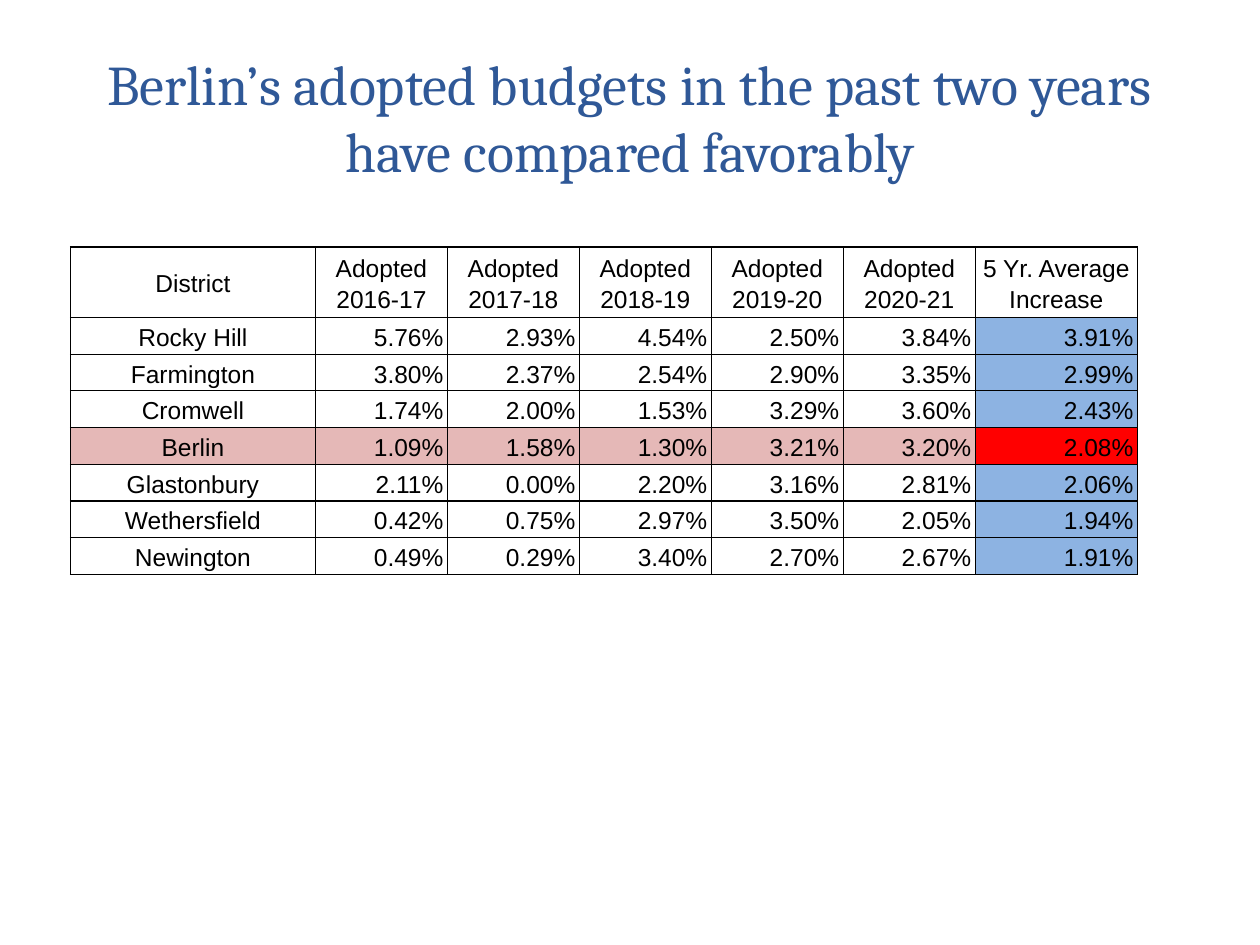
"""Build a slide comparing adopted school budget increases by district."""
from dataclasses import dataclass

import pptx
import pptx.dml.color
import pptx.enum.text
import pptx.oxml.ns
import pptx.util
from lxml import etree
from pptx.util import Cm

ALIGN = pptx.enum.text.PP_ALIGN
MIDDLE = pptx.enum.text.MSO_ANCHOR.MIDDLE


@dataclass(frozen=True)
class Theme:
    title_font: str = "Cambria"
    body_font: str = "Arial"
    title_size: int = 32
    body_size: int = 14
    border_width: float = 0.75
    title: str = "2F5897"
    text: str = "000000"
    average: str = "8DB3E2"
    highlight: str = "E5B8B7"
    highlight_average: str = "FF0000"


THEME = Theme()
TITLE = "Berlin’s adopted budgets in the past two years have compared favorably"
HIGHLIGHTED = "Berlin"
YEARS = ["2016-17", "2017-18", "2018-19", "2019-20", "2020-21"]
HEADER = ["District", *(f"Adopted {year}" for year in YEARS), "5 Yr. Average Increase"]
INCREASES = {
    "Rocky Hill": [5.76, 2.93, 4.54, 2.50, 3.84, 3.91],
    "Farmington": [3.80, 2.37, 2.54, 2.90, 3.35, 2.99],
    "Cromwell": [1.74, 2.00, 1.53, 3.29, 3.60, 2.43],
    "Berlin": [1.09, 1.58, 1.30, 3.21, 3.20, 2.08],
    "Glastonbury": [2.11, 0.00, 2.20, 3.16, 2.81, 2.06],
    "Wethersfield": [0.42, 0.75, 2.97, 3.50, 2.05, 1.94],
    "Newington": [0.49, 0.29, 3.40, 2.70, 2.67, 1.91],
}
COLUMN_WIDTHS = [Cm(4.94), *[Cm(2.66)] * len(YEARS), Cm(3.27)]
ROW_HEIGHTS = [Cm(1.42), *[Cm(0.74)] * len(INCREASES)]


def rgb(color):
    return pptx.dml.color.RGBColor.from_string(color)


def format_paragraph(p, align, font, size, color):
    p.alignment = align
    for r in p.runs:
        r.font.name = font
        r.font.size = pptx.util.Pt(size)
        r.font.color.rgb = rgb(color)


def add_title(s):
    sp = s.shapes.title
    sp.left, sp.top, sp.width, sp.height = Cm(1.27), Cm(0.76), Cm(22.86), Cm(3.18)
    tf = sp.text_frame
    tf.text = TITLE
    tf.word_wrap = True
    tf.vertical_anchor = MIDDLE
    format_paragraph(tf.paragraphs[0], ALIGN.CENTER,
                     THEME.title_font, THEME.title_size, THEME.title)


def add_borders(cell):
    tc_pr = cell._tc.get_or_add_tcPr()
    qn = pptx.oxml.ns.qn
    for side in ("lnL", "lnR", "lnT", "lnB"):
        ln = etree.SubElement(tc_pr, qn(f"a:{side}"),
                              w=str(pptx.util.Pt(THEME.border_width)))
        fill = etree.SubElement(ln, qn("a:solidFill"))
        etree.SubElement(fill, qn("a:srgbClr"), val=THEME.text)


def fill_color(district, is_average):
    if district == HIGHLIGHTED:
        return THEME.highlight_average if is_average else THEME.highlight
    return THEME.average if is_average else None


def format_cell(cell, text, align, color=None):
    cell.text_frame.text = text
    cell.vertical_anchor = MIDDLE
    cell.margin_left = cell.margin_right = Cm(0.08)
    cell.margin_top = cell.margin_bottom = Cm(0.05)
    p = cell.text_frame.paragraphs[0]
    p.line_spacing = 1.15
    format_paragraph(p, align, THEME.body_font, THEME.body_size, THEME.text)
    add_borders(cell)
    if color:
        cell.fill.solid()
        cell.fill.fore_color.rgb = rgb(color)
    else:
        cell.fill.background()


def add_budget_table(s):
    frame = s.shapes.add_table(len(ROW_HEIGHTS), len(COLUMN_WIDTHS), Cm(1.42), Cm(4.98),
                               sum(COLUMN_WIDTHS), sum(ROW_HEIGHTS))
    table = frame.table
    table.horz_banding = table.first_row = False
    for column, width in zip(table.columns, COLUMN_WIDTHS):
        column.width = width
    for row, height in zip(table.rows, ROW_HEIGHTS):
        row.height = height

    for col, label in enumerate(HEADER):
        format_cell(table.cell(0, col), label, ALIGN.CENTER)
    for row, (district, values) in enumerate(INCREASES.items(), start=1):
        format_cell(table.cell(row, 0), district, ALIGN.CENTER, fill_color(district, False))
        for col, value in enumerate(values, start=1):
            color = fill_color(district, col == len(values))
            format_cell(table.cell(row, col), f"{value:.2f}%", ALIGN.RIGHT, color)


def main():
    prs = pptx.Presentation()
    prs.slide_width, prs.slide_height = Cm(25.4), Cm(19.05)
    s = prs.slides.add_slide(prs.slide_layouts[5])
    add_title(s)
    add_budget_table(s)
    prs.save("out.pptx")


if __name__ == "__main__":
    main()
